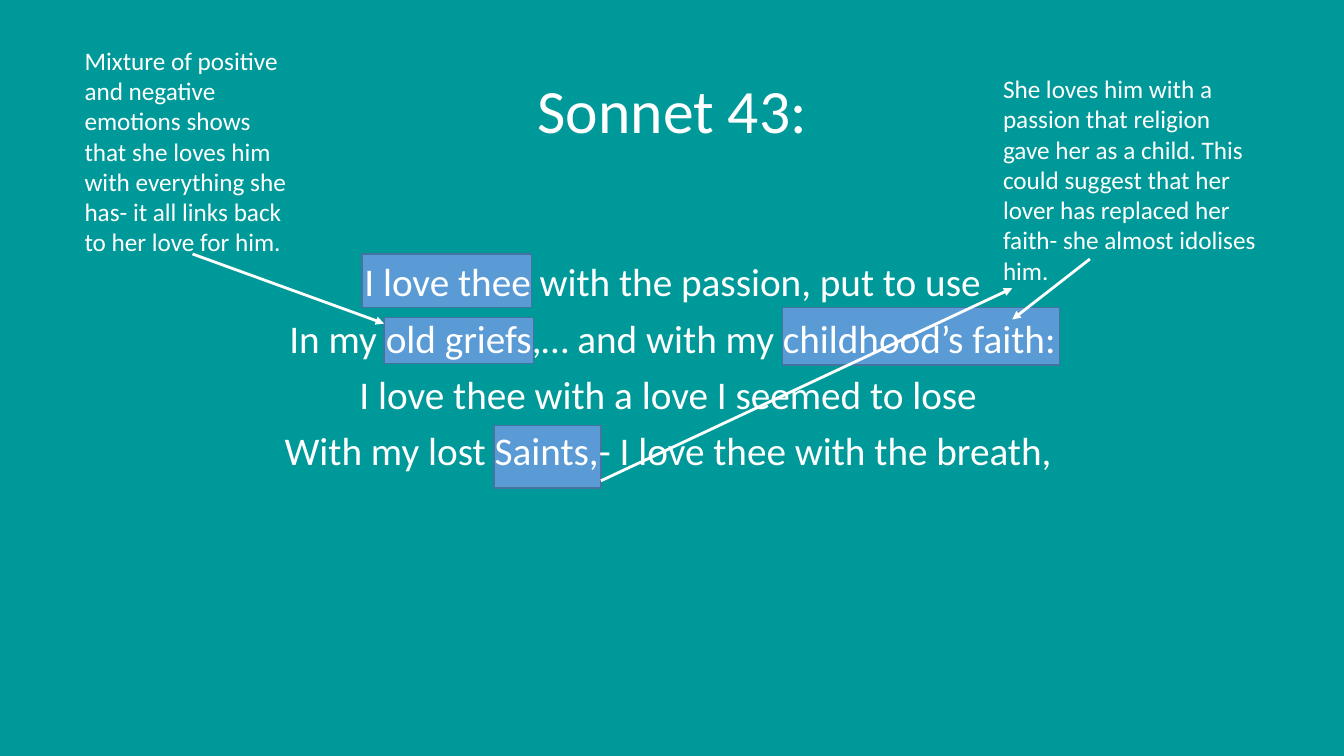
import pptx
import pptx.util
import pptx.dml.color
import pptx.enum.shapes
import pptx.enum.text
import pptx.oxml
import pptx.oxml.ns
from pptx.util import Inches, Pt
from pptx.dml.color import RGBColor

TEAL = RGBColor(0x00, 0x99, 0x99)
BLUE = RGBColor(0x5B, 0x9B, 0xD5)
EDGE = RGBColor(0x43, 0x73, 0x9E)
WHITE = RGBColor(0xFF, 0xFF, 0xFF)
CENTER = pptx.enum.text.PP_ALIGN.CENTER
LEFT = pptx.enum.text.PP_ALIGN.LEFT
TOP = pptx.enum.text.MSO_ANCHOR.TOP
MIDDLE = pptx.enum.text.MSO_ANCHOR.MIDDLE

TITLE = "Sonnet 43:"
TITLE_BOX = (0.92, 0.4, 11.5, 1.45)
VERSE = [
    "I love thee with the passion, put to use",
    "In my old griefs,… and with my childhood’s faith:",
    "I love thee with a love I seemed to lose ",
    "With my lost Saints,- I love thee with the breath, ",
]
VERSE_BOX = (0.92, 2.56, 11.5, 4.2)
HIGHLIGHTS = [
    (4.9, 4.22, 1.06, 0.62),
    (7.76, 3.05, 2.75, 0.57),
    (3.81, 3.15, 1.48, 0.46),
    (3.59, 2.52, 1.68, 0.53),
]
NOTES = [
    ("Mixture of positive and negative emotions shows that she loves him "
     "with everything she has- it all links back to her love for him.",
     (0.74, 0.4, 2.26, 2.22)),
    ("She loves him with a passion that religion gave her as a child. This "
     "could suggest that her lover has replaced her faith- she almost idolises him.",
     (9.85, 0.68, 2.73, 2.22)),
]
ARROWS = [
    (1.91, 2.52, 3.81, 3.21),
    (10.81, 2.57, 10.04, 3.17),
    (5.96, 4.77, 10.04, 2.86),
]


def inches(values):
    return [Inches(v) for v in values]


def write(shape, lines, size, align=LEFT, anchor=TOP, spacing=1.0, before=0):
    tf = shape.text_frame
    tf.word_wrap = True
    tf.vertical_anchor = anchor
    for i, line in enumerate(lines):
        p = tf.add_paragraph() if i else tf.paragraphs[0]
        p.alignment = align
        p.line_spacing = spacing
        p.space_before = Pt(before if i else 0)
        r = p.add_run()
        r.text = line
        for name, value in {"name": "Calibri", "size": Pt(size)}.items():
            setattr(r.font, name, value)
        r.font.color.rgb = WHITE


def add_highlight(s, box):
    sp = s.shapes.add_shape(pptx.enum.shapes.MSO_SHAPE.RECTANGLE, *inches(box))
    sp.shadow.inherit = False
    sp.fill.solid()
    sp.fill.fore_color.rgb = BLUE
    sp.line.color.rgb = EDGE
    sp.line.width = Pt(1)


def add_arrow(s, ends):
    cx = s.shapes.add_connector(pptx.enum.shapes.MSO_CONNECTOR.STRAIGHT, *inches(ends))
    cx.line.color.rgb = WHITE
    cx.line.width = Pt(2)
    ln = cx.line._get_or_add_ln()
    ln.append(pptx.oxml.parse_xml(
        f'<a:tailEnd {pptx.oxml.ns.nsdecls("a")} type="triangle"/>'))
    ln.getparent().append(pptx.oxml.parse_xml(
        f'<a:effectLst {pptx.oxml.ns.nsdecls("a")}/>'))


def main():
    prs = pptx.Presentation()
    prs.slide_width, prs.slide_height = inches((13.33, 7.5))
    s = prs.slides.add_slide(prs.slide_layouts[5])
    s.background.fill.solid()
    s.background.fill.fore_color.rgb = TEAL

    title = s.shapes.title
    title.left, title.top, title.width, title.height = inches(TITLE_BOX)
    write(title, [TITLE], 44, CENTER, MIDDLE, 0.9)

    for box in HIGHLIGHTS:
        add_highlight(s, box)
    write(s.shapes.add_textbox(*inches(VERSE_BOX)), VERSE, 28, CENTER, TOP, 0.9, 10)
    for note, box in NOTES:
        write(s.shapes.add_textbox(*inches(box)), [note], 18)
    for ends in ARROWS:
        add_arrow(s, ends)

    prs.save("out.pptx")


if __name__ == "__main__":
    main()
